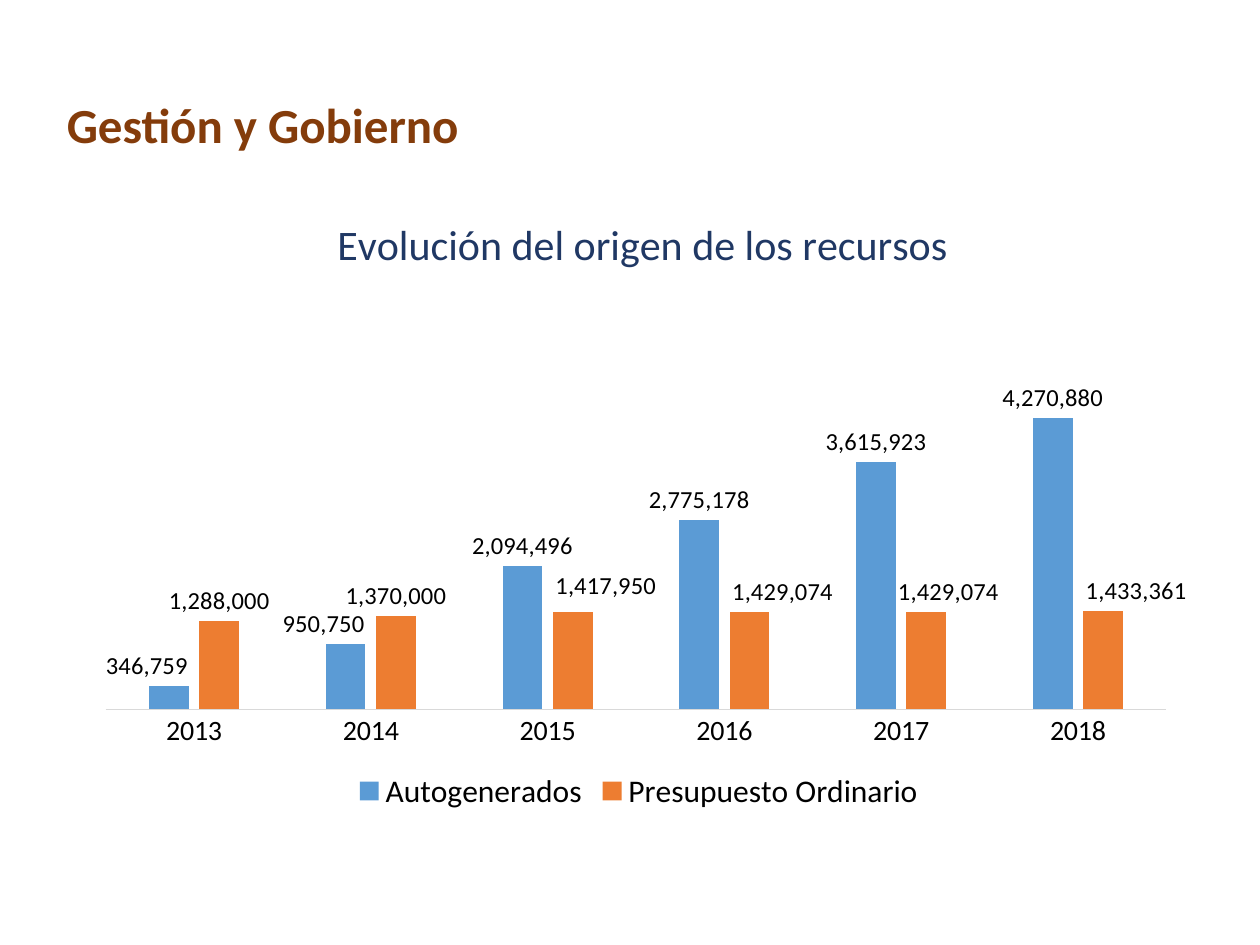
from lxml.etree import SubElement
from pptx import Presentation
from pptx.chart.data import CategoryChartData
from pptx.dml.color import RGBColor
from pptx.enum.chart import (XL_CHART_TYPE as CT, XL_LABEL_POSITION as LP,
                             XL_LEGEND_POSITION as LEG, XL_TICK_MARK as TM)
from pptx.enum.text import MSO_ANCHOR, PP_ALIGN
from pptx.oxml import parse_xml
from pptx.oxml.ns import nsdecls, qn
from pptx.util import Inches, Pt

FONT = "Calibri"
BROWN = RGBColor(0x84, 0x3C, 0x0B)
NAVY = RGBColor(0x20, 0x38, 0x64)
BLACK = RGBColor(0, 0, 0)
GRAY = RGBColor(0xD9, 0xD9, 0xD9)
BLUE = RGBColor(0x5B, 0x9B, 0xD5)
ORANGE = RGBColor(0xED, 0x7D, 0x31)

TITLE = "Gestión y Gobierno"
CHART_TITLE = "Evolución del origen de los recursos"
YEARS = ["2013", "2014", "2015", "2016", "2017", "2018"]
SERIES = [
    ("Autogenerados", BLUE,
     [346759, 950750, 2094496, 2775178, 3615923, 4270880],
     {0: (-0.02, 0), 1: (-0.02, 0)}),
    ("Presupuesto Ordinario", ORANGE,
     [1288000, 1370000, 1417950, 1429074, 1429074, 1433361],
     {2: (0.03, -0.01), 3: (0.03, 0), 4: (0.02, 0), 5: (0.03, 0)}),
]


def style(font, size, color=BLACK, bold=False):
    """Apply the slide's typeface with a size and colour."""
    font.name, font.size, font.bold = FONT, Pt(size), bold
    font.color.rgb = color


def make_layout(**settings):
    """Return a manual chart layout element."""
    layout = parse_xml(f"<c:layout {nsdecls('c')}><c:manualLayout/></c:layout>")
    for tag, val in settings.items():
        SubElement(layout[0], qn(f"c:{tag}")).set("val", str(val))
    return layout


def place(parent, layout, index):
    """Put a layout into a chart element in place of any existing one."""
    for old in parent.findall(qn("c:layout")):
        parent.remove(old)
    parent.insert(index, layout)


def add_title(slide):
    """Write the slide title."""
    s = slide.shapes.title
    s.left, s.top, s.width, s.height = map(Inches, (0.43, 0.7, 5.96, 0.57))
    tf = s.text_frame
    tf.text, tf.word_wrap, tf.vertical_anchor = TITLE, True, MSO_ANCHOR.MIDDLE
    p = tf.paragraphs[0]
    p.alignment = PP_ALIGN.LEFT
    style(p.font, 28, BROWN, True)


def add_resources_chart(slide):
    """Draw the clustered columns of resources by year."""
    data = CategoryChartData(number_format="#,##0")
    data.categories = YEARS
    for name, _, values, _ in SERIES:
        data.add_series(name, values)
    box = map(Inches, (0.69, 1.45, 8.76, 5.03))
    chart = slide.shapes.add_chart(CT.COLUMN_CLUSTERED, *box, data).chart
    style(chart.font, 10)

    chart.has_title = True
    title = chart.chart_title
    title.text_frame.text = CHART_TITLE
    style(title.text_frame.paragraphs[0].font, 24, NAVY)
    title.include_in_layout = False
    place(title._element, make_layout(xMode="edge", yMode="edge", x=0.22, y=0.04), 1)

    chart.has_legend = True
    chart.legend.position = LEG.BOTTOM
    chart.legend.include_in_layout = False
    style(chart.legend.font, 18)

    axis = chart.category_axis
    axis.major_tick_mark = axis.minor_tick_mark = TM.NONE
    axis.format.line.color.rgb, axis.format.line.width = GRAY, Pt(0.75)
    style(axis.tick_labels.font, 16)
    values_axis = chart.value_axis
    values_axis.visible = values_axis.has_major_gridlines = False
    values_axis.minimum_scale, values_axis.maximum_scale = 0, 4500000

    plot = chart.plots[0]
    plot.gap_width, plot.overlap, plot.vary_by_categories = 219, -27, False
    place(chart._chartSpace.chart.plotArea,
          make_layout(layoutTarget="inner", xMode="edge", yMode="edge",
                      x=0.017, y=0.346, w=0.961, h=0.485), 0)

    for series, (_, color, _, shifts) in zip(plot.series, SERIES):
        series.format.fill.solid()
        series.format.fill.fore_color.rgb = color
        labels = series.data_labels
        labels.show_value, labels.position = True, LP.OUTSIDE_END
        labels.number_format, labels.number_format_is_linked = "#,##0", False
        style(labels.font, 14)
        for i, (dx, dy) in shifts.items():
            label = series.points[i].data_label
            label.position = LP.OUTSIDE_END
            style(label.font, 14)
            item = next(d for d in labels._element.findall(qn("c:dLbl"))
                        if d.find(qn("c:idx")).get("val") == str(i))
            place(item, make_layout(x=dx, y=dy), 1)


def main():
    """Build and save the slide."""
    prs = Presentation()
    prs.slide_width, prs.slide_height = Inches(10), Inches(7.5)
    slide = prs.slides.add_slide(prs.slide_layouts[5])
    add_resources_chart(slide)
    add_title(slide)
    prs.save("out.pptx")


if __name__ == "__main__":
    main()
